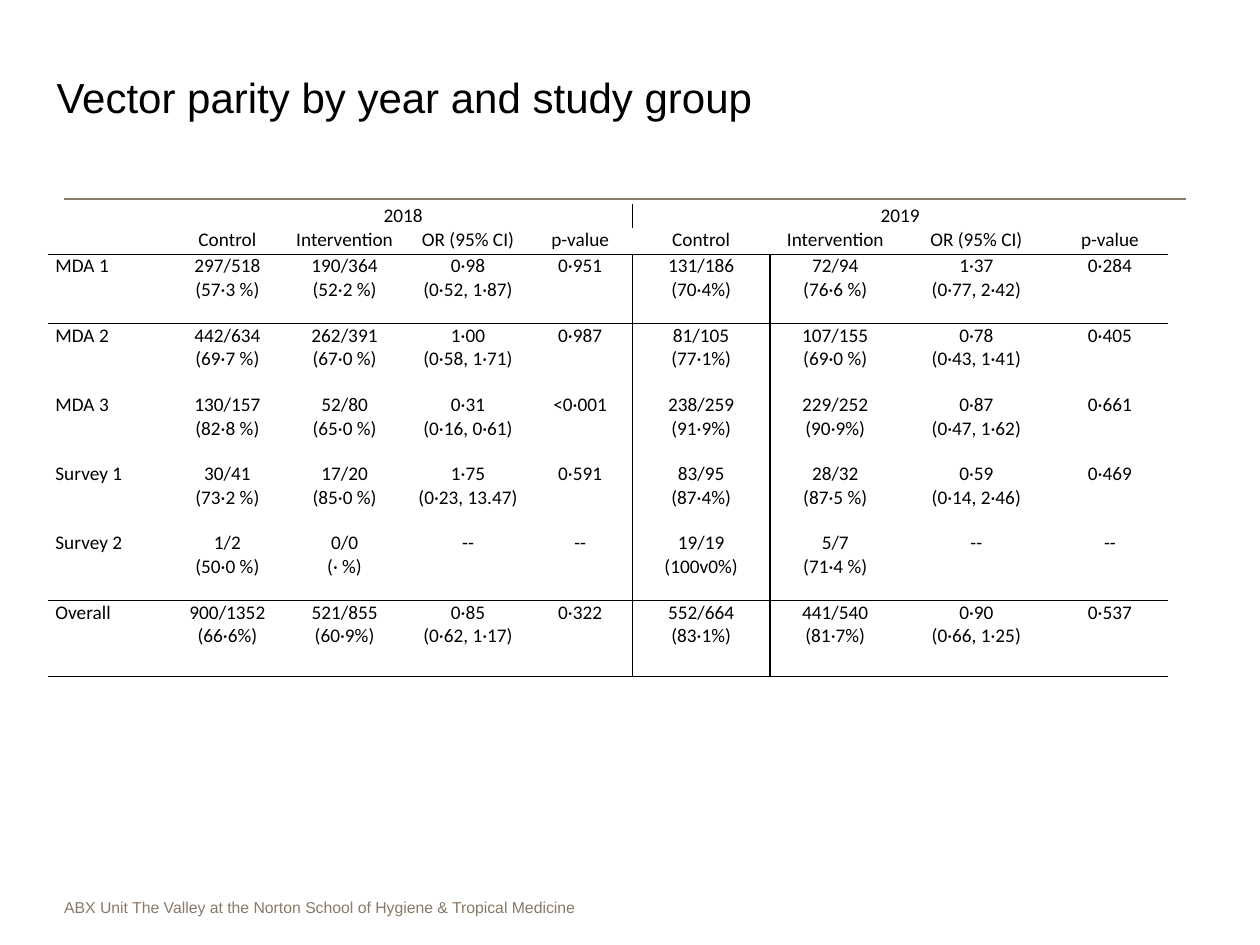
import pptx
import pptx.dml.color
import pptx.enum.shapes
import pptx.enum.text
import pptx.oxml
import pptx.oxml.ns
import pptx.util
import lxml.etree

TAUPE, BLACK = "8A7967", "000000"
FONT_SIZE = 11
NO_STYLE = "{2D5ABB26-0587-4C30-8999-92F81FD0307C}"
A = pptx.oxml.ns.nsdecls("a")
ALIGN = pptx.enum.text.PP_ALIGN

prs = pptx.Presentation()
prs.slide_width, prs.slide_height = pptx.util.Inches(10), pptx.util.Inches(7.5)
X, Y = prs.slide_width / 100, prs.slide_height / 100  # one percent of the slide
s = prs.slides.add_slide(prs.slide_layouts[6])


def rgb(hex_string):
    return pptx.dml.color.RGBColor.from_string(hex_string)


def style(p, text, name, size, color):
    """Fill a paragraph and set its font."""
    p.text = text
    p.font.name, p.font.size = name, pptx.util.Pt(size)
    p.font.color.rgb = rgb(color)


# Rule under the title
y = int(21.07 * Y)
rule = s.shapes.add_connector(
    pptx.enum.shapes.MSO_CONNECTOR.STRAIGHT, int(5.1 * X), y, int(94.1 * X), y)
rule.line.color.rgb = rgb(TAUPE)
rule.line.width = pptx.util.Pt(1.5)
lxml.etree.SubElement(rule._element.spPr, pptx.oxml.ns.qn("a:effectLst"))

# Table
col_widths = [10, 8.5, 10.1, 9.5, 8.3, 10.9, 10.4, 12, 9.2]
row_heights = [2.53, 2.8] + [7.33] * 5 + [8]
measures = ["Control", "Intervention", "OR (95% CI)", "p-value"]
rows = [
    ["", "2018", "", "", "", "2019", "", "", ""],
    [""] + measures * 2,
    ["MDA 1", "297/518 (57·3 %)", "190/364\n(52·2 %)", "0·98\n(0·52, 1·87)", "0·951",
     "131/186 (70·4%)", "72/94\n(76·6 %)", "1·37\n(0·77, 2·42)", "0·284"],
    ["MDA 2", "442/634 (69·7 %)", "262/391\n(67·0 %)", "1·00\n(0·58, 1·71)", "0·987",
     "81/105\n(77·1%)", "107/155\n(69·0 %)", "0·78\n(0·43, 1·41)", "0·405"],
    ["MDA 3", "130/157 (82·8 %)", "52/80\n(65·0 %)", "0·31\n(0·16, 0·61)", "<0·001",
     "238/259 (91·9%)", "229/252\n(90·9%)", "0·87\n(0·47, 1·62)", "0·661"],
    ["Survey 1", "30/41\n(73·2 %)", "17/20\n(85·0 %)", "1·75\n(0·23, 13.47)", "0·591",
     "83/95\n(87·4%)", "28/32\n(87·5 %)", "0·59\n(0·14, 2·46)", "0·469"],
    ["Survey 2", "1/2\n(50·0 %)", "0/0\n(· %)", "--", "--",
     "19/19\n(100v0%)", "5/7\n(71·4 %)", "--", "--"],
    ["Overall", "900/1352 (66·6%)", "521/855 (60·9%)", "0·85\n(0·62, 1·17)", "0·322",
     "552/664 (83·1%)", "441/540\n(81·7%)", "0·90\n(0·66, 1·25)", "0·537"],
]
frame = s.shapes.add_table(
    len(rows), len(col_widths), int(3.8 * X), int(21.6 * Y),
    int(sum(col_widths) * X), int(sum(row_heights) * Y))
table = frame.table
table.first_row = table.horz_banding = False
table._tbl.tblPr.find(pptx.oxml.ns.qn("a:tableStyleId")).text = NO_STYLE
for column, width in zip(table.columns, col_widths):
    column.width = int(width * X)
for row, height in zip(table.rows, row_heights):
    row.height = int(height * Y)
for first in (1, 5):
    table.cell(0, first).merge(table.cell(0, first + 3))

for i, row in enumerate(rows):
    for j, text in enumerate(row):
        cell = table.cell(i, j)
        cell.margin_left = cell.margin_right = pptx.util.Inches(0.06)
        cell.margin_top = cell.margin_bottom = 0
        cell.fill.background()
        tf = cell.text_frame
        for k, line in enumerate(text.split("\n")):
            p = tf.add_paragraph() if k else tf.paragraphs[0]
            style(p, line, "Calibri", FONT_SIZE, BLACK)
            p.alignment = ALIGN.CENTER if j else ALIGN.JUSTIFY
            if not line:  # keeps empty header cells as low as their row
                p._p.get_or_add_endParaRPr().set("sz", str(FONT_SIZE * 100))

        divided = i != 1  # the divider between years skips the measure names
        edges = {
            "lnL": divided and j == 5,
            "lnR": divided and (j == 4 or (i == 0 and j == 1)),
            "lnT": i in (2, 7),
            "lnB": i in (1, 6, 7),
        }
        shown = [edge for edge, on in edges.items() if on]
        for n, edge in enumerate(shown):
            cell._tc.get_or_add_tcPr().insert(n, pptx.oxml.parse_xml(
                f'<a:{edge} {A} w="12700"><a:solidFill><a:srgbClr val="{BLACK}"/>'
                f'</a:solidFill></a:{edge}>'))

# Footer and title
for left, top, width, height, inset, text, size, color in [
    (5.1, 94.4, 54, 3.33, 0,
     "ABX Unit The Valley at the Norton School of Hygiene & Tropical Medicine", 9, TAUPE),
    (3.5, 6.93, 89.2, 11.87, 0.1, "Vector parity by year and study group", 24, BLACK),
]:
    sp = s.shapes.add_textbox(int(left * X), int(top * Y), int(width * X), int(height * Y))
    tf = sp.text_frame
    tf.word_wrap = True
    tf.margin_left = tf.margin_right = pptx.util.Inches(inset)
    style(tf.paragraphs[0], text, "Arial", size, color)

prs.save("out.pptx")
